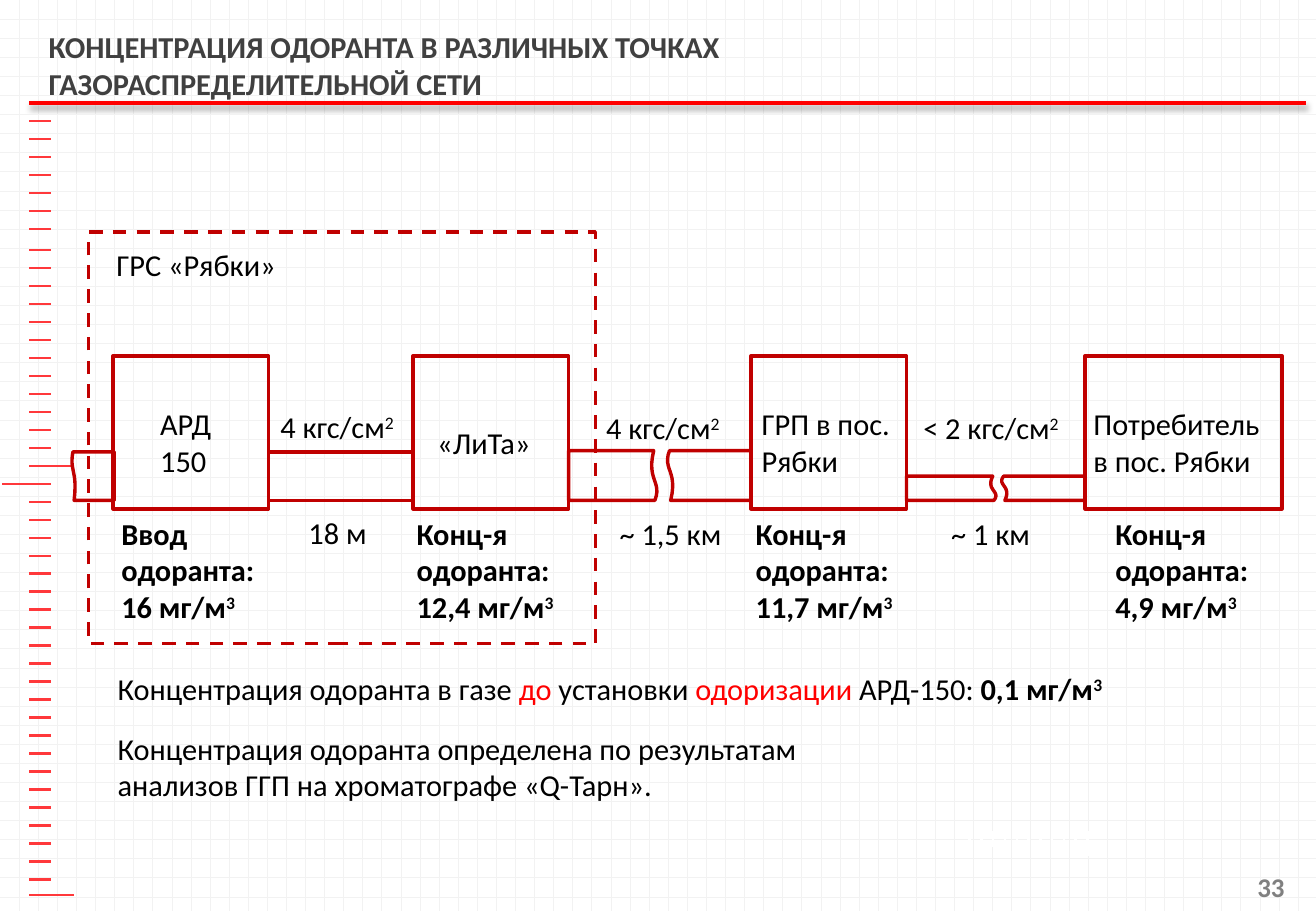
from dataclasses import dataclass
from typing import Any, NamedTuple

from lxml import etree
from pptx import Presentation
from pptx import util as u
from pptx.dml import color
from pptx.enum import dml, shapes, text
from pptx.oxml import ns

HUES = {"grid": "F2F2F2", "white": "FFFFFF", "tick": "FF383B", "red": "FF0000",
        "pipe": "C00000", "black": "000000", "grey": "808080", "title": "404040"}


class Bit(NamedTuple):
    text: str
    hue: str = "black"
    bold: bool = False
    sup: bool = False


class Box(NamedTuple):
    left: float
    top: float
    width: float
    height: float
    dash: bool = False


class Pipe(NamedTuple):
    flat: float
    torn: float
    top: float
    low: float
    bend: float = 0.39
    swing: float = 0.06


@dataclass
class Label:
    left: float
    top: float
    width: float
    height: float
    rows: list[list[Bit]]
    wrap: bool = False


def rgb(hue: str) -> color.RGBColor:
    """Give the named colour."""
    return color.RGBColor.from_string(HUES[hue])


def apply(item: Any, look: dict[str, Any]) -> None:
    """Set each format value on an object."""
    for name, value in look.items():
        setattr(item, name, value)


def split(lines: str, bold: bool = False) -> list[list[Bit]]:
    """Turn lines into rows of bits, raising what follows a caret."""
    return [[Bit(part, bold=bold, sup=k > 0) for k, part in enumerate(line.split("^"))]
            for line in lines.split("\n")]


def write(frame: Any, rows: list[list[Bit]], size: int = 18) -> None:
    """Fill a text frame with rows of bits."""
    for k, row in enumerate(rows):
        para = frame.add_paragraph() if k else frame.paragraphs[0]
        for bit in row:
            run = para.add_run()
            run.text = bit.text
            apply(run.font, {"name": "Calibri", "size": u.Pt(size), "bold": bit.bold})
            run.font.color.rgb = rgb(bit.hue)
            if bit.sup:
                run.font._element.set("baseline", "30000")


def place(slide: Any, label: Label) -> None:
    """Draw a text label."""
    area = map(u.Inches, (label.left, label.top, label.width, label.height))
    frame = slide.shapes.add_textbox(*area).text_frame
    apply(frame, {"word_wrap": label.wrap,
                  "auto_size": text.MSO_AUTO_SIZE.SHAPE_TO_FIT_TEXT})
    write(frame, label.rows)


def edge(shape: Any) -> None:
    """Give a shape a red outline without fill or shadow."""
    shape.shadow.inherit = False
    shape.fill.background()
    shape.line.color.rgb = rgb("pipe")
    shape.line.width = u.Pt(2)


def block(slide: Any, box: Box) -> None:
    """Draw an outlined rectangle."""
    area = map(u.Inches, (box.left, box.top, box.width, box.height))
    shape = slide.shapes.add_shape(shapes.MSO_SHAPE.RECTANGLE, *area)
    edge(shape)
    if box.dash:
        shape.line.dash_style = dml.MSO_LINE.DASH


def cut(slide: Any, pipe: Pipe) -> None:
    """Draw a pipe end with one wavy side."""
    mid = pipe.top + pipe.bend * (pipe.low - pipe.top)
    foot = pipe.torn + 0.01
    ends = ((pipe.torn, pipe.top), (pipe.torn - pipe.swing, mid),
            (foot + pipe.swing, mid), (foot, pipe.low))
    wave = []
    for k in range(13):
        t = k / 12
        part = ((1 - t) ** 3, 3 * t * (1 - t) ** 2, 3 * t * t * (1 - t), t ** 3)
        wave.append(tuple(u.Inches(sum(p * end[axis] for p, end in zip(part, ends)))
                          for axis in (0, 1)))
    flat, top, low = map(u.Inches, (pipe.flat, pipe.top, pipe.low))
    path = slide.shapes.build_freeform(flat, top)
    path.add_line_segments([*wave, (flat, low)], close=True)
    edge(path.convert_to_shape())


def rule(slide: Any, start: tuple[float, float], stop: tuple[float, float],
         hue: str, size: float = 1.5) -> Any:
    """Draw a straight line and return its effect list."""
    line = slide.shapes.add_connector(shapes.MSO_CONNECTOR.STRAIGHT,
                                      *map(u.Inches, (*start, *stop)))
    line.line.color.rgb = rgb(hue)
    line.line.width = u.Pt(size)
    return etree.SubElement(line._element.spPr, ns.qn("a:effectLst"))


def frame(slide: Any) -> None:
    """Draw the background, rulers and header line."""
    fill = slide.background.fill
    fill.patterned()
    fill.pattern = dml.MSO_PATTERN.DOTTED_GRID
    fill.fore_color.rgb, fill.back_color.rgb = rgb("grid"), rgb("white")
    for k in range(11):
        x = 7.98 + 0.097 * k
        rule(slide, (x, 6.84), (x, 6.97 if k % 5 else 7.05), "white")
    marks = [0.85 + 0.148 * k for k in range(8)] + [2.06 + 0.148 * k for k in range(36)]
    spans = {0: (0.24, 0.62), 20: (0.24, 0.61), 21: (0.02, 0.42), 44: (0.24, 0.61)}
    for k, y in enumerate([*marks, 7.37]):
        left, right = spans.get(k, (0.24, 0.42))
        rule(slide, (left, y), (right, y), "tick")
    glow = rule(slide, (0.24, 0.85), (10.75, 0.85), "red", 2.25)
    shade = etree.SubElement(glow, ns.qn("a:outerShdw"), blurRad=str(u.Pt(3.1)),
                             dist=str(u.Pt(1.8)), dir="5400000", rotWithShape="0")
    tint = etree.SubElement(shade, ns.qn("a:srgbClr"), val=HUES["black"])
    etree.SubElement(tint, ns.qn("a:alpha"), val="35000")


def main() -> None:
    """Build the odorant concentration slide."""
    deck = Presentation()
    apply(deck, {"slide_width": u.Inches(10.83), "slide_height": u.Inches(7.5)})
    slide = deck.slides.add_slide(deck.slide_layouts[5])
    frame(slide)

    title = slide.shapes.title
    apply(title, {"left": u.Inches(0.3), "top": u.Inches(0.16),
                  "width": u.Inches(8.61), "height": u.Inches(0.75)})
    apply(title.text_frame, {"word_wrap": True, "auto_size": text.MSO_AUTO_SIZE.NONE,
                             "vertical_anchor": text.MSO_ANCHOR.MIDDLE})
    write(title.text_frame, [[Bit("КОНЦЕНТРАЦИЯ ОДОРАНТА В РАЗЛИЧНЫХ ТОЧКАХ "
                                  "ГАЗОРАСПРЕДЕЛИТЕЛЬНОЙ СЕТИ", "title", True)]])
    title.text_frame.paragraphs[0].alignment = text.PP_ALIGN.LEFT

    nodes = [Box(x, 2.93, w, 1.26)
             for x, w in ((0.93, 1.28), (3.4, 1.28), (6.18, 1.28), (8.93, 1.62))]
    for box in [Box(2.21, 3.72, 1.19, 0.4), *nodes, Box(0.73, 1.91, 4.17, 3.39, True)]:
        block(slide, box)
    for pipe in (Pipe(4.68, 5.38, 3.71, 4.12, 0.61), Pipe(6.18, 5.51, 3.71, 4.12),
                 Pipe(7.46, 8.17, 3.92, 4.12, 0.61), Pipe(8.93, 8.26, 3.92, 4.12),
                 Pipe(0.94, 0.6, 3.72, 4.12, swing=0.03)):
        cut(slide, pipe)

    for x, y, w, h, words in (
            (1.22, 3.29, 0.64, 0.71, "АРД\n150"),
            (0.86, 1.98, 1.75, 0.4, "ГРС «Рябки»"),
            (3.5, 3.44, 1.04, 0.4, "«ЛиТа»"),
            (6.17, 3.29, 1.33, 0.71, "ГРП в пос.\nРябки"),
            (8.9, 3.29, 1.59, 0.71, "Потребитель\nв пос. Рябки"),
            (2.21, 3.31, 1.16, 0.4, "4 кгс/см^2"),
            (2.44, 4.18, 0.69, 0.4, "18 м"),
            (4.89, 3.32, 1.16, 0.4, "4 кгс/см^2"),
            (5, 4.19, 1.05, 0.4, "~ 1,5 км"),
            (7.5, 3.32, 1.34, 0.4, "< 2 кгс/см^2"),
            (7.73, 4.19, 0.86, 0.4, "~ 1 км")):
        place(slide, Label(x, y, w, h, split(words)))
    for x, w, head, dose in ((0.9, 1.3, "Ввод", "16"), (3.33, 1.35, "Конц-я", "12,4"),
                             (6.12, 1.35, "Конц-я", "11,7"), (9.08, 1.3, "Конц-я", "4,9")):
        rows = split(f"{head}\nодоранта:\n{dose} мг/м^3", True)
        place(slide, Label(x, 4.19, w, 1.01, rows))

    before = [Bit("Концентрация одоранта в газе "), Bit("до", "red"), Bit(" установки "),
              Bit("одоризации", "red"), Bit(" АРД-150:"), Bit(" 0,1 мг/м", bold=True),
              Bit("3", bold=True, sup=True)]
    place(slide, Label(0.87, 5.47, 9.07, 0.4, [before], True))
    method = split("Концентрация одоранта определена по результатам "
                   "анализов ГГП на хроматографе «Q-Тарн».")
    place(slide, Label(0.87, 5.96, 6.29, 0.71, method, True))

    page = slide.shapes.add_textbox(*map(u.Inches, (10.02, 7.1, 0.65, 0.4))).text_frame
    apply(page, {"word_wrap": True, "vertical_anchor": text.MSO_ANCHOR.MIDDLE})
    write(page, [[Bit("33", "grey", True)]], 16)
    page.paragraphs[0].alignment = text.PP_ALIGN.RIGHT
    deck.save("out.pptx")


if __name__ == "__main__":
    main()
